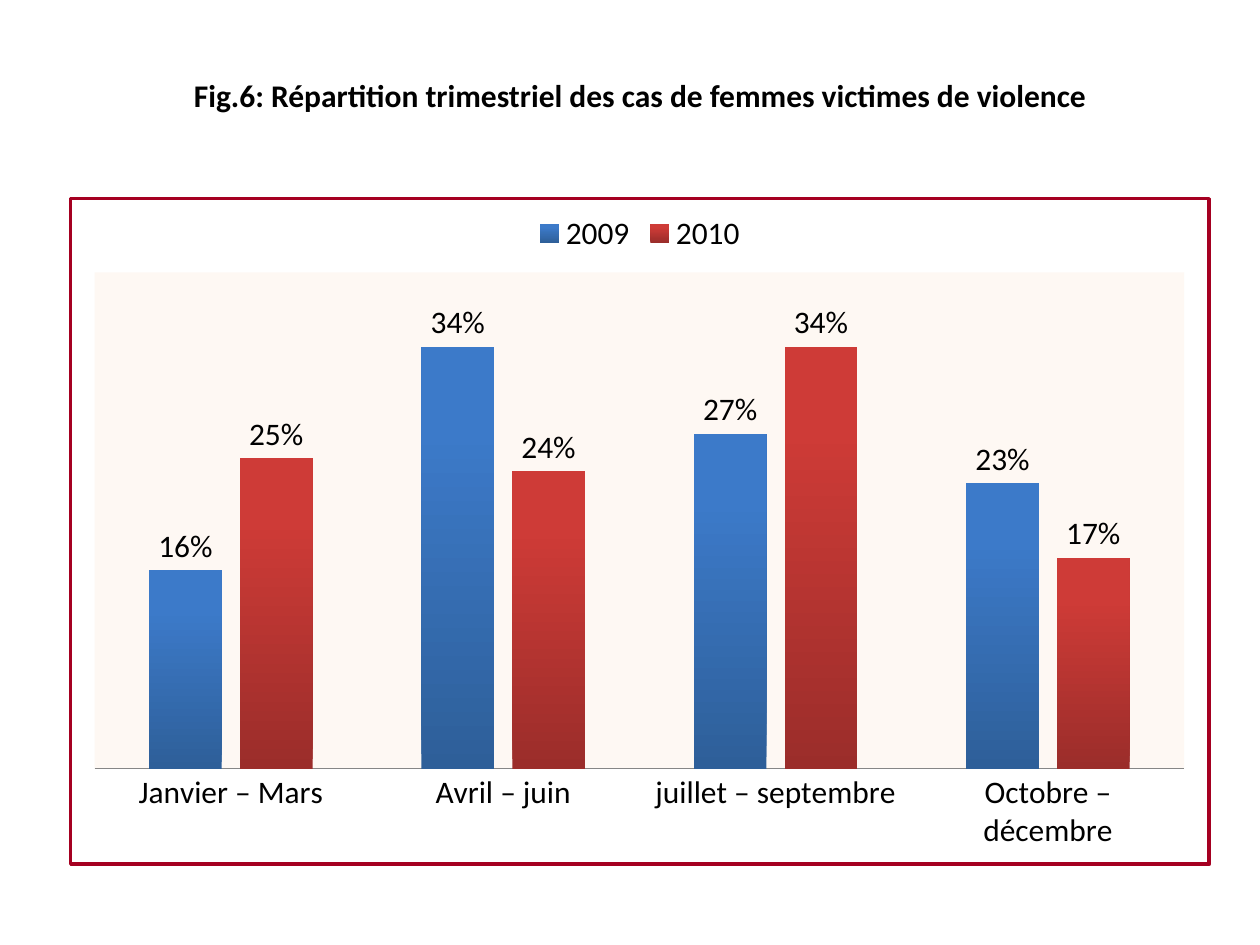
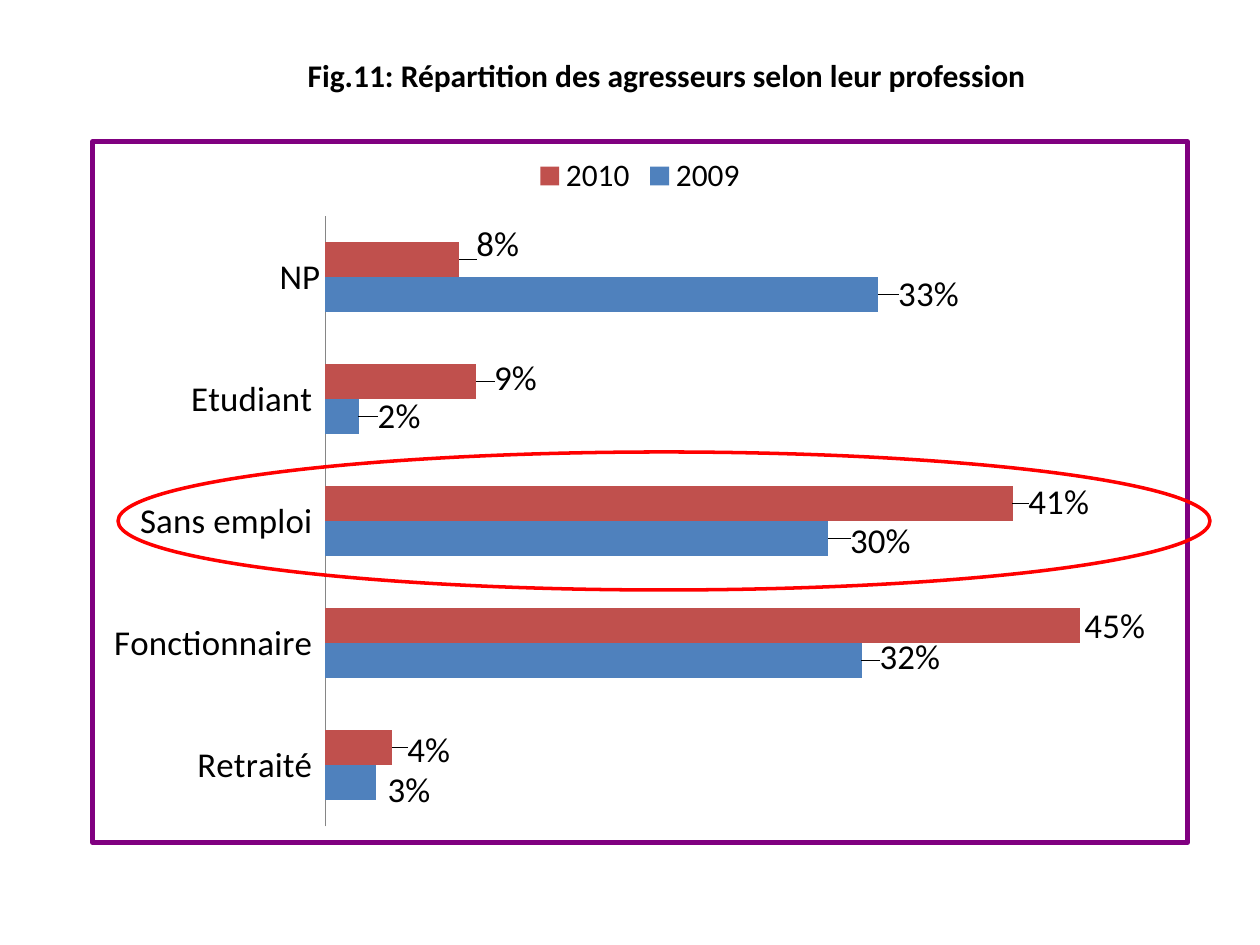
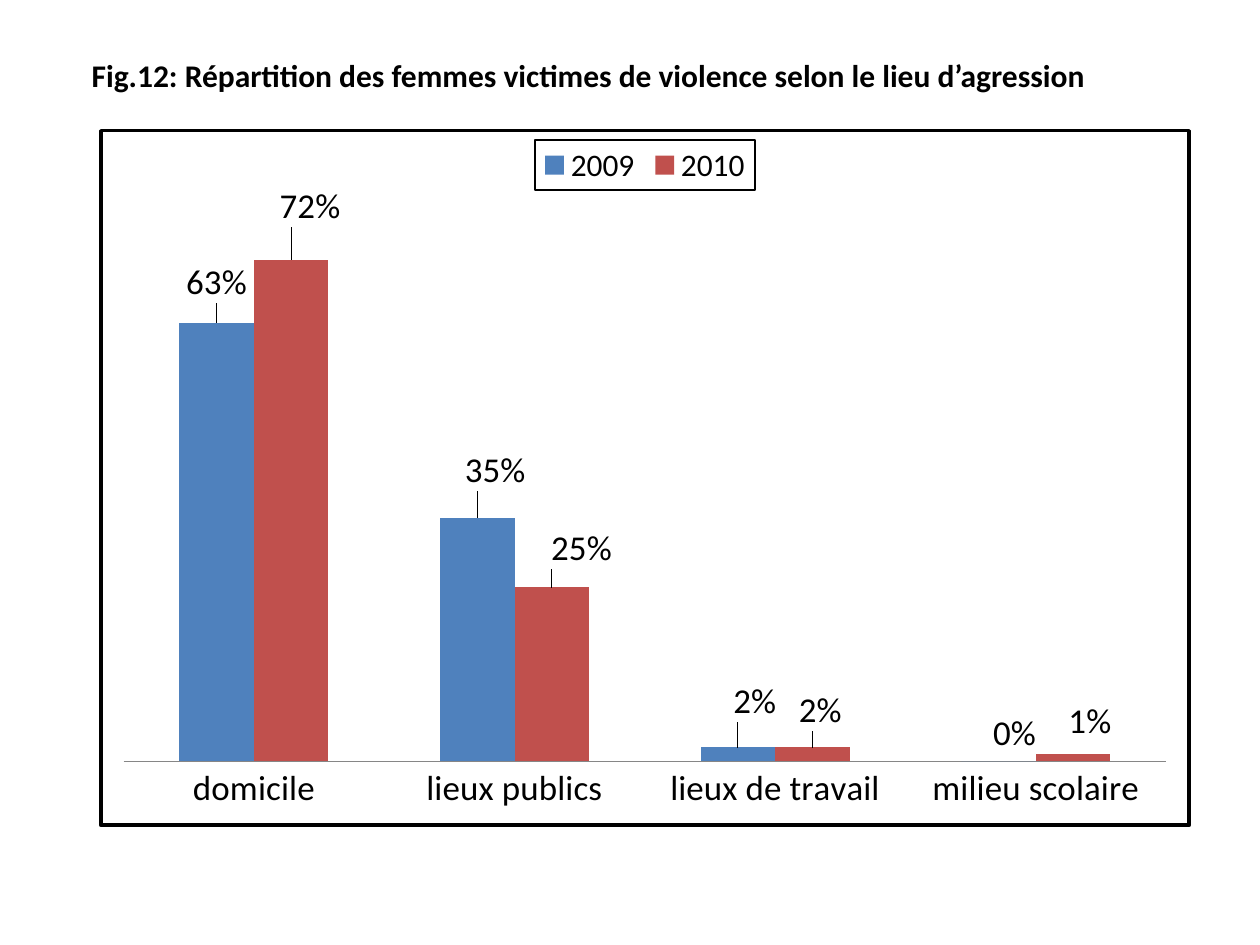
from pptx import Presentation
from pptx.chart.data import CategoryChartData
from pptx.dml.color import RGBColor
from pptx.enum.chart import XL_CHART_TYPE, XL_LABEL_POSITION, XL_LEGEND_POSITION, XL_TICK_MARK
from pptx.enum.shapes import MSO_SHAPE
from pptx.enum.text import MSO_ANCHOR, MSO_AUTO_SIZE, PP_ALIGN
from pptx.oxml import parse_xml
from pptx.oxml.ns import nsdecls
from pptx.util import Emu, Pt

EMU_PER_PX = 914400 / 126
FONT = "Calibri"
COLORS = {
    "black": "000000",
    "2009": "4F81BD",
    "2010": "C0504D",
    "2009 dark": "2E5F99",
    "2009 light": "3C7AC9",
    "2010 dark": "9B2D2A",
    "2010 light": "CE3B37",
    "axis": "868686",
    "plot": "FDEADA",
    "crimson": "A50021",
    "purple": "800080",
    "highlight": "FF0000",
}


def px(length):
    return Emu(round(length * EMU_PER_PX))


def rgb(name):
    return RGBColor.from_string(COLORS[name])


def solid_fill(name, alpha=100):
    return (f'<a:solidFill><a:srgbClr val="{COLORS[name]}">'
            f'<a:alpha val="{alpha * 1000}"/></a:srgbClr></a:solidFill>')


def shape_properties(content):
    return parse_xml(f'<c:spPr {nsdecls("c", "a")}>{content}</c:spPr>')


def outline(name, points):
    return shape_properties(
        f'<a:noFill/><a:ln w="{Pt(points)}">{solid_fill(name)}<a:round/></a:ln>')


def manual_layout(**values):
    content = "".join(f'<c:{key} val="{value}"/>' for key, value in values.items())
    return parse_xml(f'<c:layout {nsdecls("c")}><c:manualLayout>{content}'
                     '</c:manualLayout></c:layout>')


class Deck:
    def __init__(self):
        self.presentation = Presentation()
        self.presentation.slide_width = px(1260)
        self.presentation.slide_height = px(945)
        self.slide = None

    def add_slide(self, title, box, align=PP_ALIGN.LEFT):
        layout = self.presentation.slide_layouts[5]
        self.slide = self.presentation.slides.add_slide(layout)
        shape = self.slide.shapes.title
        shape.left, shape.top, shape.width, shape.height = map(px, box)
        frame = shape.text_frame
        frame.auto_size = MSO_AUTO_SIZE.NONE
        frame.word_wrap = True
        frame.vertical_anchor = MSO_ANCHOR.MIDDLE
        paragraph = frame.paragraphs[0]
        paragraph.alignment = align
        run = paragraph.add_run()
        run.text = title
        self.format_font(run.font, 18, bold=True)

    def format_font(self, font, size, bold=False):
        font.name = FONT
        font.size = Pt(size)
        font.bold = bold
        font.color.rgb = rgb("black")

    def add_chart(self, kind, box, plot_box, categories, series, maximum, border,
                  border_width=2, size=20, overlap=0):
        data = CategoryChartData(number_format="0%")
        data.categories = categories
        for name, values in series.items():
            data.add_series(name, values)
        chart = self.slide.shapes.add_chart(kind, *map(px, box), data).chart
        self.format_font(chart.font, size)
        chart.has_title = False
        chart.has_legend = True
        chart.legend.position = XL_LEGEND_POSITION.TOP
        chart.legend.include_in_layout = False
        self.format_font(chart.legend.font, 18)
        chart.element.xpath("c:txPr")[0].addprevious(outline(border, border_width))

        # Axes
        value_axis = chart.value_axis
        value_axis.visible = False
        value_axis.has_major_gridlines = False
        value_axis.minimum_scale, value_axis.maximum_scale = 0, maximum
        category_axis = chart.category_axis
        category_axis.major_tick_mark = XL_TICK_MARK.NONE
        category_axis.format.line.color.rgb = rgb("axis")
        self.format_font(category_axis.tick_labels.font, size)

        # Bars and their labels
        plot = chart.plots[0]
        plot.gap_width = 150
        plot.overlap = overlap
        plot.vary_by_categories = False
        for bars in plot.series:
            bars.format.fill.solid()
            bars.format.fill.fore_color.rgb = rgb(bars.name)
            self.format_labels(bars.data_labels, size)

        # Plot area, as shares of the chart
        left, top, width, height = box
        plot_left, plot_top, plot_width, plot_height = plot_box
        plot_area = chart.element.xpath("c:chart/c:plotArea")[0]
        for old_layout in plot_area.xpath("c:layout"):
            plot_area.remove(old_layout)
        plot_area.insert(0, manual_layout(
            layoutTarget="inner", xMode="edge", yMode="edge",
            x=round((plot_left - left) / width, 4), y=round((plot_top - top) / height, 4),
            w=round(plot_width / width, 4), h=round(plot_height / height, 4)))
        return chart

    def format_labels(self, labels, size):
        labels.show_value = True
        labels.number_format = "0%"
        labels.number_format_is_linked = False
        labels.position = XL_LABEL_POSITION.OUTSIDE_END
        self.format_font(labels.font, size)

    def shade_bars(self, chart):
        for bars in chart.plots[0].series:
            fill = bars.format.fill
            fill.gradient()
            fill.gradient_angle = 90
            dark, light = fill.gradient_stops
            dark.color.rgb = rgb(f"{bars.name} dark")
            light.color.rgb = rgb(f"{bars.name} light")
            light.position = 0.8

    def tint_plot(self, chart, color, alpha):
        plot_area = chart.element.xpath("c:chart/c:plotArea")[0]
        plot_area.append(shape_properties(solid_fill(color, alpha)))

    def frame_legend(self, chart):
        text = chart.element.xpath("c:chart/c:legend/c:txPr")[0]
        text.addprevious(outline("black", 1))

    def move_labels(self, chart, box, shifts, size=20):
        """Shift each label by (right, down) px from its usual place."""
        for bars in chart.plots[0].series:
            for index, (right, down) in enumerate(shifts[bars.name]):
                label = bars.points[index].data_label
                self.format_font(label.font, size)
                label.position = XL_LABEL_POSITION.OUTSIDE_END
                element = chart.element.xpath(
                    f'.//c:ser[c:tx//c:v="{bars.name}"]//c:dLbl[c:idx/@val="{index}"]')[0]
                for old_layout in element.xpath("c:layout"):
                    element.remove(old_layout)
                element.xpath("c:idx")[0].addnext(manual_layout(
                    x=round(right / box[2], 4), y=round(down / box[3], 4)))

    def add_ellipse(self, box, color, width):
        shape = self.slide.shapes.add_shape(MSO_SHAPE.OVAL, *map(px, box))
        shape.shadow.inherit = False
        shape.fill.background()
        shape.line.color.rgb = rgb(color)
        shape.line.width = Pt(width)


def quarters(deck):
    deck.add_slide("Fig.6: Répartition trimestriel des cas de femmes victimes de violence",
                   (178, 70, 925, 50), PP_ALIGN.CENTER)
    chart = deck.add_chart(
        XL_CHART_TYPE.COLUMN_CLUSTERED, (69, 197, 1142, 669), (93, 271, 1093, 499),
        ["Janvier – Mars", "Avril – juin", "juillet – septembre", "Octobre – décembre"],
        {"2009": [0.16, 0.34, 0.27, 0.23], "2010": [0.25, 0.24, 0.34, 0.17]},
        maximum=0.4, border="crimson", size=18, overlap=-25)
    deck.shade_bars(chart)
    deck.tint_plot(chart, "plot", 30)


def professions(deck):
    deck.add_slide("Fig.11: Répartition des agresseurs selon leur profession",
                   (295, 50, 756, 50))
    box = (90, 139, 1100, 706)
    chart = deck.add_chart(
        XL_CHART_TYPE.BAR_CLUSTERED, box, (324, 214, 842, 615),
        ["Retraité ", "Fonctionnaire ", "Sans emploi ", "Etudiant ", "NP"],
        {"2009": [0.03, 0.32, 0.3, 0.02, 0.33], "2010": [0.04, 0.45, 0.41, 0.09, 0.08]},
        maximum=0.5, border="purple", border_width=3)
    deck.move_labels(chart, box, {
        "2009": [(7, 7), (13, -4), (17, 3), (14, 0), (15, 0)],
        "2010": [(10, 2), (0, 0), (11, -2), (13, -4), (12, -16)],
    })
    deck.add_ellipse((118, 452, 1092, 138), "highlight", 2)


def places(deck):
    deck.add_slide(
        "Fig.12: Répartition des femmes victimes de violence selon le lieu d’agression",
        (79, 50, 1027, 50))
    box = (99, 129, 1092, 698)
    chart = deck.add_chart(
        XL_CHART_TYPE.COLUMN_CLUSTERED, box, (122, 203, 1046, 560),
        ["domicile", "lieux publics", "lieux de travail", "milieu scolaire"],
        {"2009": [0.63, 0.35, 0.02, 0], "2010": [0.72, 0.25, 0.02, 0.01]},
        maximum=0.8, border="black")
    deck.frame_legend(chart)
    deck.move_labels(chart, box, {
        "2009": [(0, -14), (18, -21), (17, -20), (16, -2)],
        "2010": [(19, -28), (30, -13), (8, -11), (17, -7)],
    })


def main():
    deck = Deck()
    for build in (quarters, professions, places):
        build(deck)
    deck.presentation.save("out.pptx")


if __name__ == "__main__":
    main()
